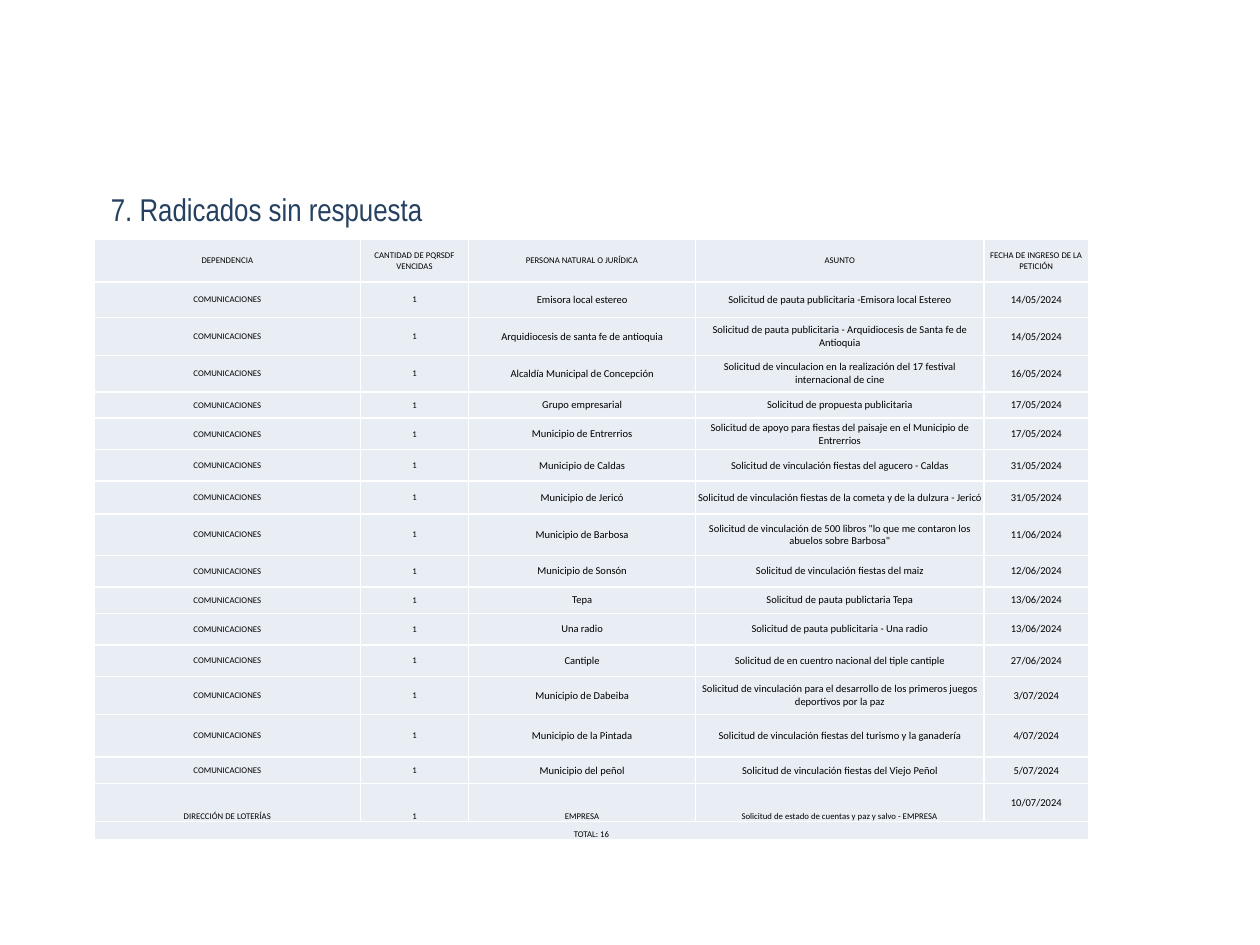
from pptx import Presentation
from pptx.dml.color import RGBColor
from pptx.enum.text import MSO_ANCHOR as Anchor, MSO_AUTO_SIZE as AutoSize, PP_ALIGN as Align
from pptx.oxml import parse_xml
from pptx.oxml.ns import nsdecls
from pptx.util import Inches, Pt

NAVY = RGBColor(0x25, 0x40, 0x61)
BLACK = RGBColor(0, 0, 0)
WHITE = RGBColor(0xFF, 0xFF, 0xFF)
PALE_BLUE = RGBColor(0xE9, 0xED, 0xF4)

COLUMN_WIDTHS = [2.11, 0.86, 1.8, 2.29, 0.83]
ROW_HEIGHTS = [0.34, 0.28, 0.3, 0.29, 0.21, 0.25, 0.25, 0.26, 0.33,
               0.25, 0.21, 0.25, 0.25, 0.3, 0.34, 0.21, 0.3, 0.15]
HEADERS = ["DEPENDENCIA", "CANTIDAD DE PQRSDF VENCIDAS", "PERSONA NATURAL O JURÍDICA",
           "ASUNTO", "FECHA DE INGRESO DE LA PETICIÓN"]
REQUESTS = [
    ("Emisora local estereo", "Solicitud de pauta publicitaria -Emisora local Estereo", "14/05/2024"),
    ("Arquidiocesis de santa fe de antioquia",
     "Solicitud de pauta publicitaria - Arquidiocesis de Santa fe de Antioquia", "14/05/2024"),
    ("Alcaldía Municipal de Concepción",
     "Solicitud de vinculacion en la realización del 17 festival internacional de cine", "16/05/2024"),
    ("Grupo empresarial", "Solicitud de propuesta publicitaria", "17/05/2024"),
    ("Municipio de Entrerrios",
     "Solicitud de apoyo para fiestas del paisaje en el Municipio de Entrerrios", "17/05/2024"),
    ("Municipio de Caldas", "Solicitud de vinculación fiestas del agucero - Caldas", "31/05/2024"),
    ("Municipio de Jericó",
     "Solicitud de vinculación fiestas de la cometa y de la dulzura - Jericó", "31/05/2024"),
    ("Municipio de Barbosa",
     'Solicitud de vinculación de 500 libros "lo que me contaron los abuelos sobre Barbosa"',
     "11/06/2024"),
    ("Municipio de Sonsón", "Solicitud de vinculación fiestas del maiz", "12/06/2024"),
    ("Tepa", "Solicitud de pauta publictaria Tepa", "13/06/2024"),
    ("Una radio", "Solicitud de pauta publicitaria - Una radio", "13/06/2024"),
    ("Cantiple", "Solicitud de en cuentro nacional del tiple cantiple", "27/06/2024"),
    ("Municipio de Dabeiba",
     "Solicitud de vinculación para el desarrollo de los primeros juegos deportivos por la paz",
     "3/07/2024"),
    ("Municipio de la Pintada", "Solicitud de vinculación fiestas del turismo y la ganadería", "4/07/2024"),
    ("Municipio del peñol", "Solicitud de vinculación fiestas del Viejo Peñol", "5/07/2024"),
]
LOTTERY_ROW = ["DIRECCIÓN DE LOTERÍAS", "1", "EMPRESA",
               "Solicitud de estado de cuentas y paz y salvo - EMPRESA", "10/07/2024"]


def add_run(paragraph, text, font_name, size, color):
    run = paragraph.add_run()
    run.text = text
    run.font.name = font_name
    run.font.size = Pt(size)
    run.font.color.rgb = color
    return run


def place_title(slide, left, top, width, height):
    title = slide.shapes.title
    title.left, title.top, title.width, title.height = left, top, width, height
    frame = title.text_frame
    frame.word_wrap = True
    frame.auto_size = AutoSize.NONE
    frame.vertical_anchor = Anchor.TOP
    paragraph = frame.paragraphs[0]
    paragraph.alignment = Align.LEFT
    paragraph.line_spacing = 1.5
    paragraph._p.get_or_add_pPr().set("marL", str(Inches(0.5)))
    run = add_run(paragraph, "7. Radicados sin respuesta", "Arial Narrow", 18, NAVY)
    run._r.get_or_add_rPr().insert(0, parse_xml(
        f'<a:ln {nsdecls("a")} w="{Pt(0.75)}"><a:solidFill>'
        f'<a:srgbClr val="{NAVY}"/></a:solidFill></a:ln>'))


def set_borders(cell):
    properties = cell._tc.get_or_add_tcPr()
    for side in ("lnL", "lnR", "lnT", "lnB"):
        properties.append(parse_xml(
            f'<a:{side} {nsdecls("a")} w="{Pt(1)}"><a:solidFill>'
            f'<a:srgbClr val="{WHITE}"/></a:solidFill></a:{side}>'))


def fill_cell(cell, text, size, anchor):
    cell.margin_left = cell.margin_right = cell.margin_top = cell.margin_bottom = 0
    cell.vertical_anchor = anchor
    paragraph = cell.text_frame.paragraphs[0]
    paragraph.alignment = Align.CENTER
    add_run(paragraph, text, "Calibri", size, BLACK)


def place_table(slide, left, top, width, height):
    frame = slide.shapes.add_table(len(ROW_HEIGHTS), len(COLUMN_WIDTHS), left, top, width, height)
    table = frame.table
    table.first_row = False
    table.horz_banding = False
    for column, column_width in zip(table.columns, COLUMN_WIDTHS):
        column.width = Inches(column_width)
    for row, row_height in zip(table.rows, ROW_HEIGHTS):
        row.height = Inches(row_height)
    for cell in table.iter_cells():
        set_borders(cell)
        cell.fill.solid()
        cell.fill.fore_color.rgb = PALE_BLUE

    middle, bottom = Anchor.MIDDLE, Anchor.BOTTOM
    rows = [(HEADERS, [5] * 5, [middle] * 5)]
    rows += [(["COMUNICACIONES", "1", *request], [5, 5, 6, 6, 6], [middle] * 5)
             for request in REQUESTS]
    rows.append((LOTTERY_ROW, [5, 5, 5, 5, 6], [bottom] * 4 + [middle]))
    for row, (texts, sizes, anchors) in zip(table.rows, rows):
        for cell, text, size, anchor in zip(row.cells, texts, sizes, anchors):
            fill_cell(cell, text, size, anchor)

    last = len(ROW_HEIGHTS) - 1
    total = table.cell(last, 0)
    total.merge(table.cell(last, len(COLUMN_WIDTHS) - 1))
    fill_cell(total, f"TOTAL: {len(REQUESTS) + 1}", 5, bottom)


def main():
    presentation = Presentation()
    presentation.slide_width = Inches(10)
    presentation.slide_height = Inches(7.5)
    slide = presentation.slides.add_slide(presentation.slide_layouts[5])
    place_title(slide, Inches(0.28), Inches(1.31), Inches(7.9), Inches(1.18))
    place_table(slide, Inches(0.75), Inches(1.9), Inches(7.9), Inches(4.76))
    presentation.save("out.pptx")


if __name__ == "__main__":
    main()
